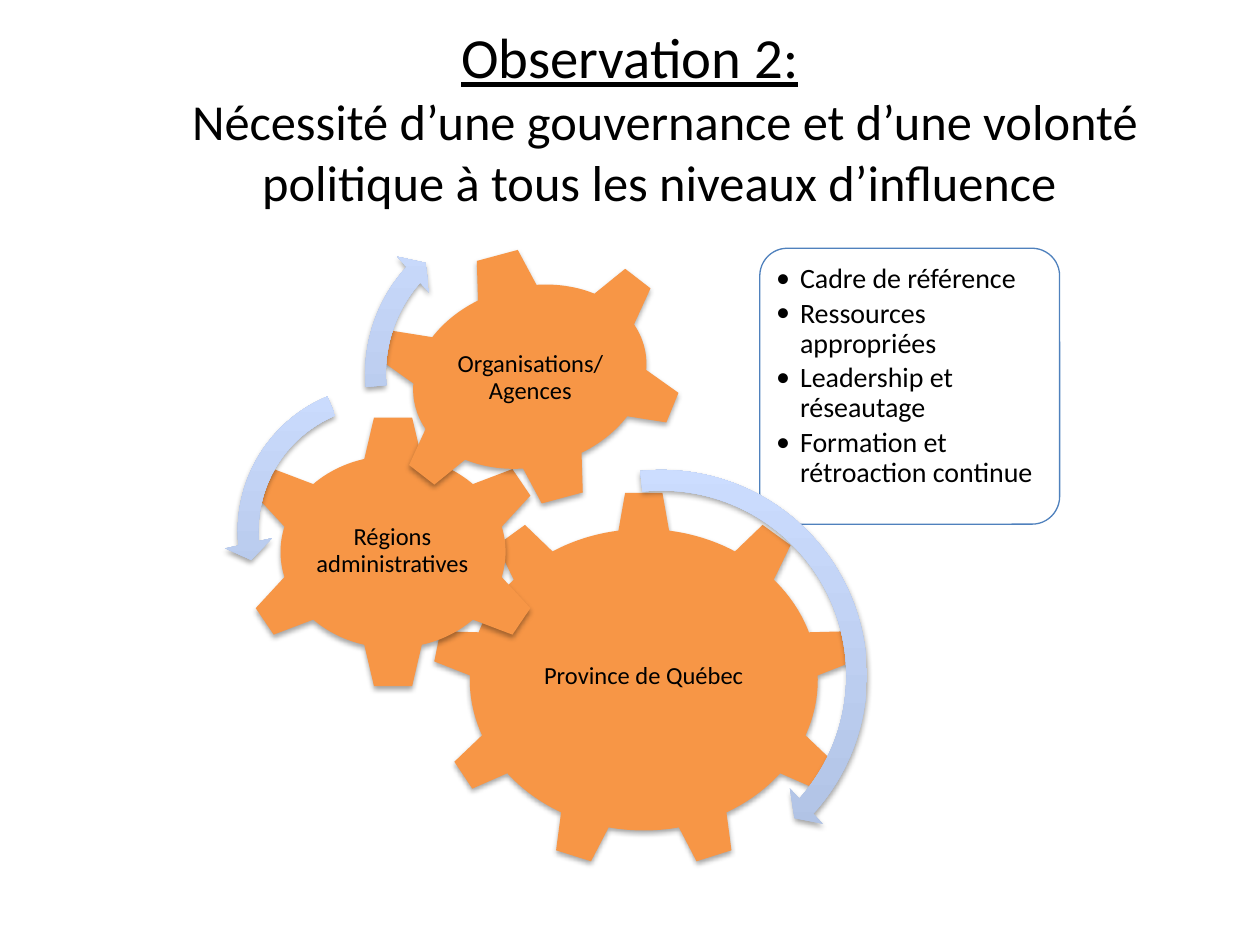
from lxml.etree import SubElement
from pptx import Presentation
from pptx.dml.color import RGBColor
from pptx.enum.shapes import MSO_SHAPE
from pptx.enum.text import MSO_ANCHOR, PP_ALIGN
from pptx.oxml.ns import qn
from pptx.util import Inches, Pt

BLACK = RGBColor(0x00, 0x00, 0x00)
WHITE = RGBColor(0xFF, 0xFF, 0xFF)
ORANGE = RGBColor(0xF7, 0x96, 0x46)
BLUE = RGBColor(0x4F, 0x81, 0xBD)
DEEP = RGBColor(0xAD, 0xBF, 0xE1)
PALE = RGBColor(0xCC, 0xDD, 0xFF)

HEAD = "Observation 2:"
CLAIM = ("Nécessité d’une gouvernance et d’une volonté politique "
         "à tous les niveaux d’influence ")
GEARS = (
    (MSO_SHAPE.GEAR_9, (3.43, 3.9, 3.36, 2.99), 0,
     "Province de Québec", (4.08, 4.6, 2.06, 1.54)),
    (MSO_SHAPE.GEAR_6, (1.9, 3.29, 2.44, 2.18), 0,
     "Régions administratives", (2.48, 3.84, 1.27, 1.07)),
    (MSO_SHAPE.GEAR_6, (2.96, 1.97, 2.49, 2.04), 345,
     "Organisations/ Agences", (3.54, 2.4, 1.34, 1.2)),
)
POINTS = ("Cadre de référence", "Ressources appropriées",
          "Leadership et réseautage", "Formation et rétroaction continue")
ARROWS = (
    (MSO_SHAPE.CIRCULAR_ARROW, (3.51, 3.62, 3.48, 3.48),
     4.7, (2.99, 25.24, 158.45), 5.5),
    (MSO_SHAPE.LEFT_CIRCULAR_ARROW, (1.78, 2.95, 2.53, 2.53),
     6.5, (4.3, 104.89, 148.38), 7.5),
    (MSO_SHAPE.CIRCULAR_ARROW, (2.79, 1.6, 2.73, 2.73),
     6, (3.94, 133.14, 105.08), 7),
)


def style(obj, form):
    """Set every attribute named in a dict of format values."""
    for name, value in form.items():
        setattr(obj, name, value)


def write(para, text, form):
    """Add one black run to a paragraph."""
    run = para.add_run()
    run.text = text
    style(run.font, {"name": "Calibri", **form})
    run.font.color.rgb = BLACK


def hang(para, size):
    """Give a paragraph a hanging indent and return its properties."""
    props = para._p.get_or_add_pPr()
    props.set("marL", str(Inches(size)))
    props.set("indent", str(-Inches(size)))
    return props


def add_text(slide, box, pad, anchor):
    """Add a wrapping text box and return its frame."""
    frame = slide.shapes.add_textbox(*map(Inches, box)).text_frame
    sides = ("margin_left", "margin_top", "margin_right", "margin_bottom")
    style(frame, {"word_wrap": True, "vertical_anchor": anchor,
                  **dict.fromkeys(sides, Inches(pad))})
    return frame


def add_form(slide, kind, box):
    """Add a preset shape without line or theme shadow."""
    shape = slide.shapes.add_shape(kind, *map(Inches, box))
    shape.shadow.inherit = False
    shape.line.fill.background()
    return shape


def add_shade(shape):
    """Give a shape a soft shadow below it."""
    effects = shape._element.spPr.find(qn("a:effectLst"))
    shade = SubElement(effects, qn("a:outerShdw"), blurRad=str(Pt(3.1)),
                       dist=str(Pt(1.8)), dir="5400000", rotWithShape="0")
    tint = SubElement(shade, qn("a:srgbClr"), val="000000")
    SubElement(tint, qn("a:alpha"), val="35000")


def add_title(slide, box):
    """Place the two-part centred title."""
    para = add_text(slide, box, 0.1, MSO_ANCHOR.MIDDLE).paragraphs[0]
    para.alignment = PP_ALIGN.CENTER
    hang(para, 0.56)
    write(para, HEAD, {"size": Pt(32.4), "underline": True})
    para.add_line_break()
    write(para, CLAIM, {"size": Pt(28.8)})


def add_gear(slide, kind, box, turn, text, inner):
    """Place a gear and its level label."""
    gear = add_form(slide, kind, box)
    gear.rotation = turn
    gear.fill.solid()
    gear.fill.fore_color.rgb = ORANGE
    add_shade(gear)
    para = add_text(slide, inner, 0.02, MSO_ANCHOR.MIDDLE).paragraphs[0]
    style(para, {"alignment": PP_ALIGN.CENTER, "line_spacing": 0.9})
    write(para, text, {"size": Pt(14)})


def add_panel(slide, box):
    """Place the rounded panel with its bullet list."""
    panel = add_form(slide, MSO_SHAPE.ROUNDED_RECTANGLE, box)
    panel.adjustments[0] = 0.1
    panel.fill.solid()
    panel.fill.fore_color.rgb = WHITE
    tint = panel._element.spPr.find(qn("a:solidFill"))[0]
    SubElement(tint, qn("a:alpha"), val="90000")
    panel.line.color.rgb = BLUE
    panel.line.width = Pt(0.75)
    left, top, width, height = box
    gap = 0.06
    inner = (left + gap, top + gap, width - 2 * gap, height - 2 * gap)
    frame = add_text(slide, inner, 0.07, MSO_ANCHOR.TOP)
    for i, text in enumerate(POINTS):
        para = frame.add_paragraph() if i else frame.paragraphs[0]
        style(para, {"level": 1, "line_spacing": 0.9,
                     "space_after": Pt(2.4), "alignment": PP_ALIGN.LEFT})
        props = hang(para, 0.19)
        SubElement(props, qn("a:buFont"), typeface="Calibri")
        SubElement(props, qn("a:buChar"), char="•")
        write(para, text, {"size": Pt(16)})


def add_arrow(slide, kind, box, thick, bends, head):
    """Place a curved arrow, its widths in percent, with a gradient."""
    arrow = add_form(slide, kind, box)
    for i, bend in enumerate((thick / 100, *bends, head / 100)):
        arrow.adjustments[i] = bend
    arrow.fill.gradient()
    arrow.fill.gradient_angle = 90
    stops = arrow.fill.gradient_stops
    for place, (stop, color) in enumerate(zip(stops, (DEEP, PALE))):
        stop.color.rgb = color
        stop.position = place
    add_shade(arrow)


def main():
    """Build and save the slide."""
    deck = Presentation()
    style(deck, {"slide_width": Inches(10), "slide_height": Inches(7.5)})
    slide = deck.slides.add_slide(deck.slide_layouts[6])
    add_title(slide, (0.5, 0.3, 9, 1.25))
    for gear in GEARS:
        add_gear(slide, *gear)
    add_panel(slide, (6.03, 1.97, 2.38, 2.19))
    for arrow in ARROWS:
        add_arrow(slide, *arrow)
    deck.save("out.pptx")


if __name__ == "__main__":
    main()
